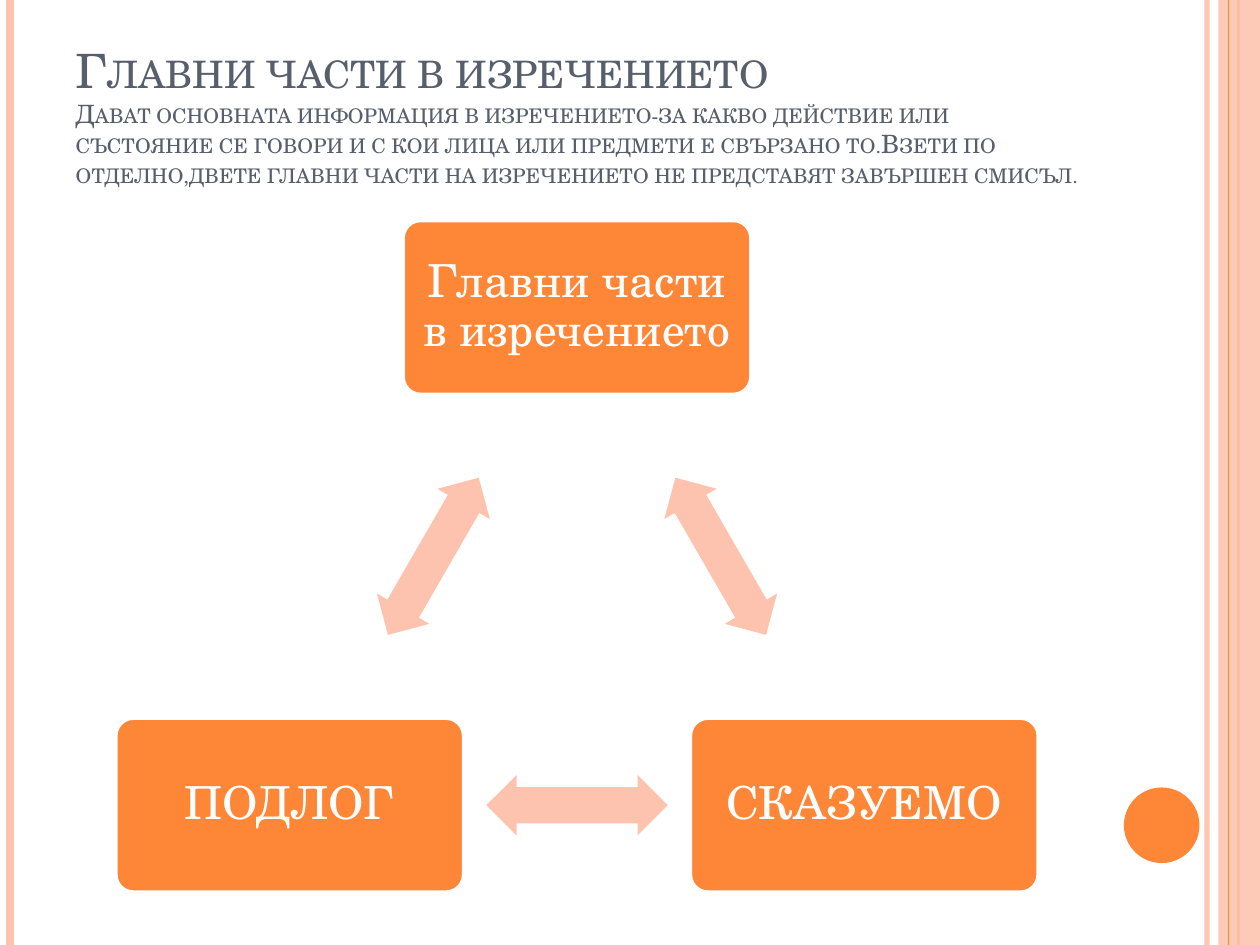
from lxml.etree import SubElement
from pptx import Presentation
from pptx.dml.color import RGBColor
from pptx.enum.shapes import MSO_CONNECTOR, MSO_SHAPE
from pptx.enum.text import MSO_ANCHOR, PP_ALIGN, MSO_AUTO_SIZE
from pptx.oxml.ns import qn
from pptx.util import Inches, Pt

WIDTH, HEIGHT = 10, 7.5
FONT = "TeX Gyre Schola"
COLORS = {"orange": "FE8637", "peach": "FEC3AE", "slate": "575F6D", "white": "FFFFFF"}

HEADING = "Главни части в изречението"
EXPLANATION = (
    "Дават основната информация в изречението-за какво действие или състояние "
    "се говори и с кои лица или предмети е свързано то.Взети по отделно,двете "
    "главни части на изречението не представят завършен смисъл."
)

# Triangle of nodes: centre column, column step, top and bottom rows
CENTER_X, STEP_X, TOP_Y, BOTTOM_Y = 4.58, 2.28, 2.44, 6.39
NODES = [
    (HEADING, CENTER_X, TOP_Y),
    ("СКАЗУЕМО", CENTER_X + STEP_X, BOTTOM_Y),
    ("ПОДЛОГ", CENTER_X - STEP_X, BOTTOM_Y),
]
NODE_SIZE = (2.76, 1.38)
ARROW_SIZE = (1.44, 0.48)

# Vertical rules: x, colour, width in points, opacity in percent
RULES = [
    (9.58, "peach", 3, 93),
    (0.08, "peach", 4.5, 100),
    (9.83, "orange", 1.5, 100),
    (9.75, "orange", 0.75, 100),
]


def rgb(name):
    return RGBColor.from_string(COLORS[name])


def set_opacity(element, percent):
    color = element.find(".//" + qn("a:srgbClr"))
    SubElement(color, qn("a:alpha")).set("val", str(percent * 1000))


def add_rule(slide, x, color, width, opacity):
    rule = slide.shapes.add_connector(
        MSO_CONNECTOR.STRAIGHT, Inches(x), 0, Inches(x), Inches(HEIGHT))
    rule.line.color.rgb = rgb(color)
    rule.line.width = Pt(width)
    properties = rule._element.spPr
    if opacity < 100:
        set_opacity(properties, opacity)
    SubElement(properties, qn("a:effectLst"))


def add_centered(slide, kind, center, size, color):
    (x, y), (width, height) = center, size
    shape = slide.shapes.add_shape(
        kind, Inches(x - width / 2), Inches(y - height / 2), Inches(width), Inches(height))
    shape.shadow.inherit = False
    shape.fill.solid()
    shape.fill.fore_color.rgb = rgb(color)
    shape.line.fill.background()
    return shape


def add_frame(slide):
    for rule in RULES[:3]:
        add_rule(slide, *rule)
    band = add_centered(
        slide, MSO_SHAPE.RECTANGLE, (WIDTH - 0.165, HEIGHT / 2), (0.33, HEIGHT), "peach")
    set_opacity(band._element.spPr, 87)
    add_rule(slide, *RULES[3])
    add_centered(slide, MSO_SHAPE.OVAL, (9.22, 6.55), (0.6, 0.6), "orange")


def fill_title(title):
    title.left, title.top = Inches(0.5), Inches(0.3)
    title.width, title.height = Inches(8.17), Inches(1.25)
    frame = title.text_frame
    frame.word_wrap = True
    frame.auto_size = MSO_AUTO_SIZE.NONE
    frame.vertical_anchor = MSO_ANCHOR.BOTTOM
    paragraph = frame.paragraphs[0]
    paragraph.alignment = PP_ALIGN.LEFT
    for text, size in ((HEADING + " ", 27), (EXPLANATION, 14.4)):
        if paragraph.runs:
            paragraph.add_line_break()
        run = paragraph.add_run()
        run.text = text
        run.font.size = Pt(size)
        run.font.name = FONT
        run.font.color.rgb = rgb("slate")
        run.font._element.set("cap", "small")


def add_node(slide, text, x, y):
    node = add_centered(slide, MSO_SHAPE.ROUNDED_RECTANGLE, (x, y), NODE_SIZE, "orange")
    node.adjustments[0] = 0.1
    node.line.color.rgb = rgb("white")
    node.line.width = Pt(2)
    frame = node.text_frame
    frame.word_wrap = True
    frame.vertical_anchor = MSO_ANCHOR.MIDDLE
    frame.margin_left = frame.margin_right = Inches(0.11)
    frame.margin_top = frame.margin_bottom = Inches(0.11)
    paragraph = frame.paragraphs[0]
    paragraph.text = text
    paragraph.alignment = PP_ALIGN.CENTER
    paragraph.line_spacing = 0.9
    paragraph.font.size = Pt(26)
    paragraph.font.name = FONT
    paragraph.font.color.rgb = rgb("white")


def add_arrow(slide, start, end, rotation):
    middle = [(a + b) / 2 for a, b in zip(start, end)]
    arrow = add_centered(slide, MSO_SHAPE.LEFT_RIGHT_ARROW, middle, ARROW_SIZE, "peach")
    arrow.adjustments[0] = 0.6
    arrow.adjustments[1] = 0.5
    arrow.rotation = rotation


def main():
    prs = Presentation()
    prs.slide_width, prs.slide_height = Inches(WIDTH), Inches(HEIGHT)
    slide = prs.slides.add_slide(prs.slide_layouts[5])

    add_frame(slide)
    fill_title(slide.shapes.title)

    # Cycle: each node, then the arrow to the next one
    for i, (text, x, y) in enumerate(NODES):
        add_node(slide, text, x, y)
        next_center = NODES[(i + 1) % len(NODES)][1:]
        add_arrow(slide, (x, y), next_center, 60 + 120 * i)

    prs.save("out.pptx")


if __name__ == "__main__":
    main()
